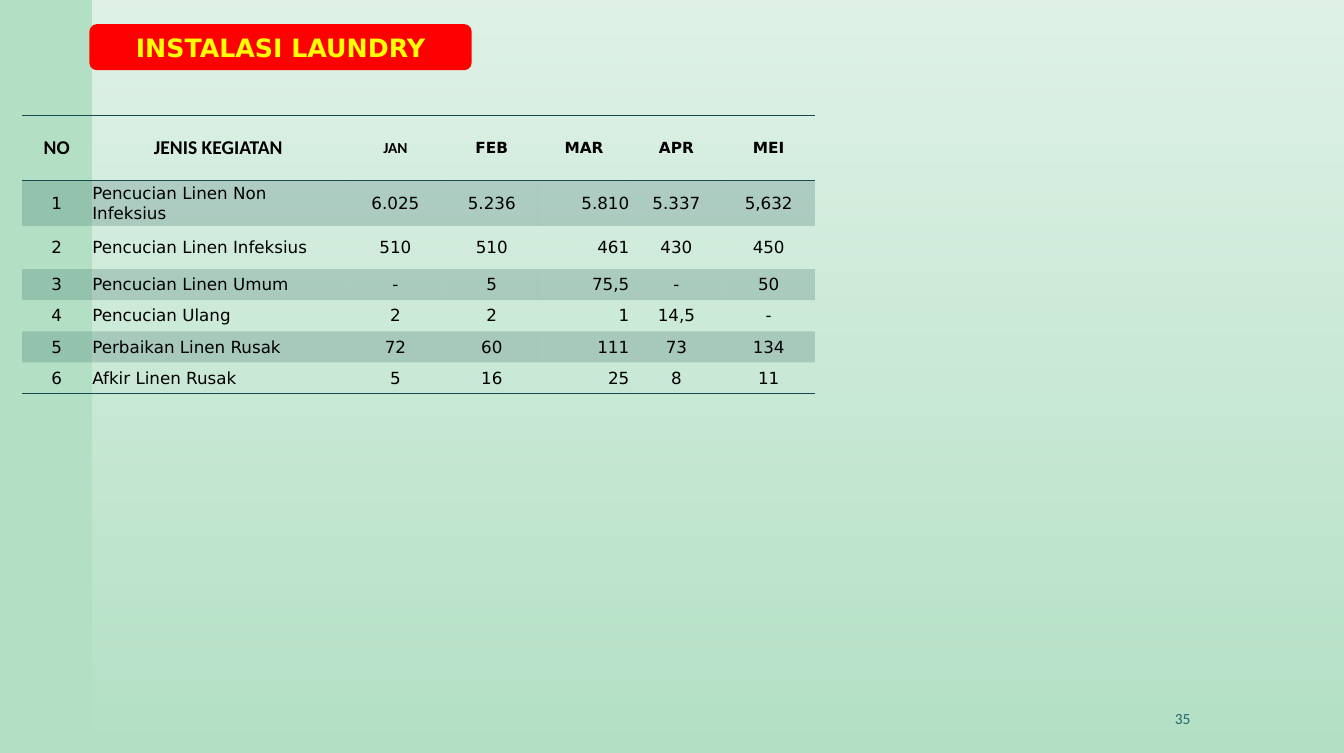
from lxml import etree
from pptx import Presentation
from pptx.dml.color import RGBColor
from pptx.enum.shapes import MSO_SHAPE
from pptx.enum.text import MSO_ANCHOR, MSO_AUTO_SIZE, PP_ALIGN
from pptx.oxml.ns import qn
from pptx.util import Inches, Pt

LEFT, CENTER, RIGHT = PP_ALIGN.LEFT, PP_ALIGN.CENTER, PP_ALIGN.RIGHT
MIDDLE = MSO_ANCHOR.MIDDLE
RECT, ROUNDED = MSO_SHAPE.RECTANGLE, MSO_SHAPE.ROUNDED_RECTANGLE
NO_FIT = MSO_AUTO_SIZE.NONE
PLAIN_TABLE = "{2D5ABB26-0587-4C30-8999-92F81FD0307C}"

THEME = {
    "mint": "B3E0C5", "white": "FFFFFF", "teal": "164B4F", "number": "1F696F",
    "black": "000000", "red": "FF0000", "yellow": "FFFF00",
    "body": "DejaVu Sans", "head": "Calibri",
    "title_size": 18.1, "head_size": 14, "month_size": 11,
    "body_size": 12, "number_size": 11.1,
    "band_alpha": 20, "veil_alpha": (60, 0), "rule": 1,
}


def write(tf, text, font, size, color, align=CENTER, bold=False):
    tf.word_wrap = True
    tf.vertical_anchor = MIDDLE
    p = tf.paragraphs[0]
    p.alignment = align
    r = p.add_run()
    r.text = text
    for name, value in {"name": font, "size": Pt(size), "bold": bold}.items():
        setattr(r.font, name, value)
    r.font.color.rgb = RGBColor.from_string(color)


def fade(element, percent):
    etree.SubElement(element, qn("a:alpha"), val=str(percent * 1000))


prs = Presentation()
prs.slide_width, prs.slide_height = Inches(13.39), Inches(7.5)
s = prs.slides.add_slide(prs.slide_layouts[5])
s.background.fill.solid()
s.background.fill.fore_color.rgb = RGBColor.from_string(THEME["mint"])

margin = Inches(0.92)
veil = s.shapes.add_shape(RECT, margin, 0, prs.slide_width - margin, prs.slide_height)
veil.shadow.inherit = False
veil.line.fill.background()
veil.fill.gradient()
veil.fill.gradient_angle = 270
for stop in veil.fill.gradient_stops:
    stop.color.rgb = RGBColor.from_string(THEME["white"])
for color, alpha in zip(veil._element.iter(qn("a:srgbClr")), THEME["veil_alpha"]):
    fade(color, alpha)

number = s.shapes.add_textbox(Inches(8.84), Inches(6.95), Inches(3.12), Inches(0.4))
write(number.text_frame, "35", THEME["head"], THEME["number_size"], THEME["number"], RIGHT)

rows = [
    ("NO", "JENIS KEGIATAN", "JAN", "FEB", "MAR", "APR", "MEI"),
    ("1", "Pencucian Linen Non Infeksius", "6.025", "5.236", "5.810", "5.337", "5,632"),
    ("2", "Pencucian Linen Infeksius", "510", "510", "461", "430", "450"),
    ("3", "Pencucian Linen Umum", "-", "5", "75,5", "-", "50"),
    ("4", "Pencucian Ulang", "2", "2", "1", "14,5", "-"),
    ("5", "Perbaikan Linen Rusak", "72", "60", "111", "73", "134"),
    ("6", "Afkir Linen Rusak", "5", "16", "25", "8", "11"),
]
widths = [0.69, 2.53, 1] + [0.92] * 4
heights = [0.65, 0.45, 0.43] + [0.31] * 4
aligns = [CENTER, LEFT, CENTER, CENTER, RIGHT, CENTER, CENTER]
head_fonts = [THEME["head"]] * 3 + [THEME["body"]] * 4
head_sizes = [THEME["head_size"]] * 2 + [THEME["month_size"]] * 5
head_insets = {"margin_left": 0.2, "margin_right": 0.2, "margin_top": 0.08, "margin_bottom": 0.08}
body_insets = {"margin_left": 0.01, "margin_right": 0.01, "margin_top": 0.01, "margin_bottom": 0}
borders = {0: ("a:lnT", "a:lnB"), len(rows) - 1: ("a:lnB",)}

frame = s.shapes.add_table(len(rows), len(widths), Inches(0.22), Inches(1.15),
                           Inches(sum(widths)), Inches(sum(heights)))
table = frame.table
table._tbl.tblPr.find(qn("a:tableStyleId")).text = PLAIN_TABLE
for column, width in zip(table.columns, widths):
    column.width = Inches(width)
for i, (values, height) in enumerate(zip(rows, heights)):
    table.rows[i].height = Inches(height)
    for j, value in enumerate(values):
        cell = table.cell(i, j)
        header = i == 0
        for name, inset in (head_insets if header else body_insets).items():
            setattr(cell, name, Inches(inset))
        write(cell.text_frame, value,
              head_fonts[j] if header else THEME["body"],
              head_sizes[j] if header else THEME["body_size"],
              THEME["black"], CENTER if header else aligns[j], header)
        cell.vertical_anchor = MIDDLE
        tcPr = cell._tc.get_or_add_tcPr()
        for tag in borders.get(i, ()):
            ln = etree.SubElement(tcPr, qn(tag), w=str(Pt(THEME["rule"])))
            fill = etree.SubElement(ln, qn("a:solidFill"))
            etree.SubElement(fill, qn("a:srgbClr"), val=THEME["teal"])
        if i % 2:
            cell.fill.solid()
            cell.fill.fore_color.rgb = RGBColor.from_string(THEME["teal"])
            fade(tcPr.find(qn("a:solidFill"))[0], THEME["band_alpha"])
        else:
            cell.fill.background()

title_box = [Inches(v) for v in (0.89, 0.24, 3.81, 0.46)]
plate = s.shapes.add_shape(ROUNDED, *title_box)
plate.shadow.inherit = False
plate.fill.solid()
plate.fill.fore_color.rgb = RGBColor.from_string(THEME["red"])
plate.line.fill.background()

title = s.shapes.title
for name, value in zip(("left", "top", "width", "height"), title_box):
    setattr(title, name, value)
title.text_frame.auto_size = NO_FIT
write(title.text_frame, "INSTALASI LAUNDRY", THEME["body"], THEME["title_size"],
      THEME["yellow"], bold=True)
s.shapes._spTree.append(title._element)

prs.save("out.pptx")
